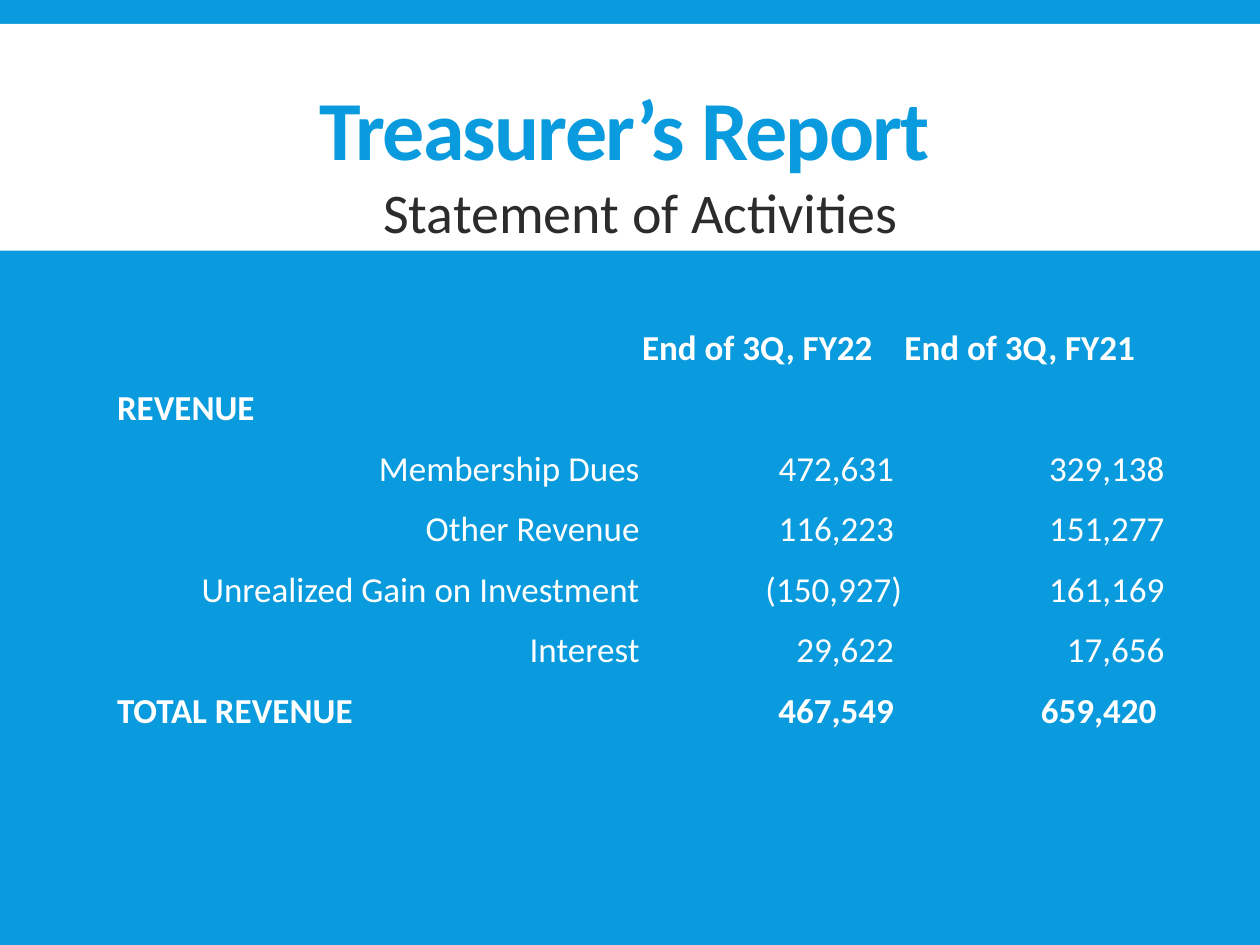
"""Build the Treasurer's Report slide with its statement of activities."""
import pptx
import pptx.util
import pptx.dml.color
import pptx.enum.shapes
import pptx.enum.text
import pptx.oxml.ns
from dataclasses import dataclass

Pt = pptx.util.Pt
ALIGN = pptx.enum.text.PP_ALIGN
ANCHOR = pptx.enum.text.MSO_ANCHOR


@dataclass(frozen=True)
class Theme:
    font: str = "Calibri"
    blue: str = "099BDD"
    white: str = "FFFFFF"
    dark: str = "2C2C2C"
    title_size: int = 48
    subtitle_size: int = 32
    body_size: int = 20
    plain_table: str = "{2D5ABB26-0587-4C30-8999-92F81FD0307C}"


theme = Theme()


def write(frame, text, *, size=theme.body_size, color=theme.white, bold=False, align=ALIGN.LEFT):
    para = frame.paragraphs[0]
    para.alignment = align
    span = para.add_run()
    span.text = text
    span.font.name = theme.font
    span.font.size = Pt(size)
    span.font.bold = bold
    span.font.color.rgb = pptx.dml.color.RGBColor.from_string(color)
    return span


deck = pptx.Presentation()
deck.slide_width, deck.slide_height = Pt(720), Pt(540)
page = deck.slides.add_slide(deck.slide_layouts[5])
page.background.fill.solid()
page.background.fill.fore_color.rgb = pptx.dml.color.RGBColor.from_string(theme.blue)

band = page.shapes.add_shape(
    pptx.enum.shapes.MSO_SHAPE.RECTANGLE, Pt(0), Pt(13.7), Pt(720), Pt(129.6))
band.shadow.inherit = False
band.fill.solid()
band.fill.fore_color.rgb = pptx.dml.color.RGBColor.from_string(theme.white)
band.line.fill.background()

rows = [
    ("", "End of 3Q, FY22", "End of 3Q, FY21"),
    ("REVENUE", "", ""),
    ("Membership Dues", "472,631", "329,138"),
    ("Other Revenue", "116,223", "151,277"),
    ("Unrealized Gain on Investment", "(150,927)", "161,169"),
    ("Interest", "29,622", "17,656"),
    ("TOTAL REVENUE", "467,549", "659,420"),
]
first_row = 2
holder = page.shapes.add_table(
    first_row + len(rows), 3, Pt(66.2), Pt(102.2), Pt(600), Pt(316.4))
table = holder.table
table.first_row = table.horz_banding = False
holder.element.find(".//" + pptx.oxml.ns.qn("a:tableStyleId")).text = theme.plain_table
for column, width in zip(table.columns, (300, 150, 150)):
    column.width = Pt(width)
for index, row in enumerate(table.rows):
    row.height = Pt(39.6 if index == 0 else 34.6)
for cell in table.iter_cells():
    cell.fill.background()
    cell.vertical_anchor = ANCHOR.BOTTOM
    cell.margin_left = cell.margin_right = cell.margin_top = Pt(0.7)
    cell.margin_bottom = Pt(0)

table.cell(0, 0).merge(table.cell(0, 2))
write(table.cell(0, 0).text_frame, "Statement of Activities",
      size=theme.subtitle_size, color=theme.dark, align=ALIGN.CENTER)

for row_index, values in enumerate(rows, first_row):
    heading = values[0] in ("", "REVENUE")
    total = values[0] == "TOTAL REVENUE"
    for column_index, text in enumerate(values):
        if not text:
            continue
        cell = table.cell(row_index, column_index)
        left = heading or (total and column_index == 0)
        write(cell.text_frame, text, bold=heading or total,
              align=ALIGN.LEFT if left else ALIGN.RIGHT)
        if not left and not text.endswith(")") and (column_index == 1 or (total and column_index == 2)):
            cell.margin_right = Pt(5.3)

title = page.shapes.title
title.left, title.top, title.width, title.height = Pt(0), Pt(23.8), Pt(714.2), Pt(113.8)
title.text_frame.word_wrap = True
title.text_frame.auto_size = pptx.enum.text.MSO_AUTO_SIZE.NONE
title.text_frame.vertical_anchor = ANCHOR.MIDDLE
title.text_frame.margin_bottom = Pt(20)
heading_span = write(title.text_frame, "Treasurer’s Report", size=theme.title_size,
                     color=theme.blue, bold=True, align=ALIGN.CENTER)
heading_span.font.fill
heading_span.font._element.set("spc", "-100")
page.shapes.element.append(title.element)

deck.save("out.pptx")
